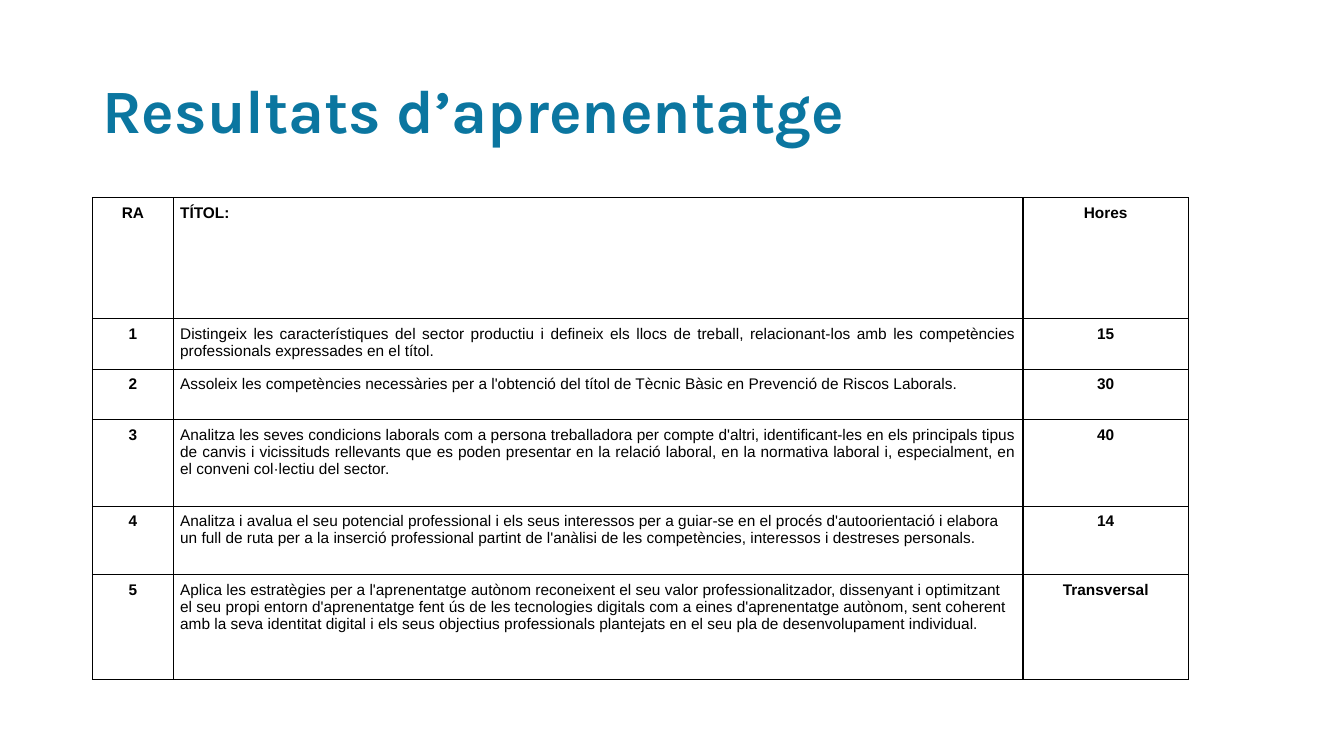
from dataclasses import dataclass

from pptx import Presentation
from pptx.dml.color import RGBColor
from pptx.enum.text import MSO_ANCHOR, PP_ALIGN
from pptx.oxml import parse_xml
from pptx.oxml.ns import nsdecls
from pptx.util import Cm, Pt


@dataclass(frozen=True)
class Theme:
    title_color: str = "0B76A0"
    text_color: str = "000000"
    border_color: str = "000000"
    title_font: str = "Karla"
    table_font: str = "Arial"
    title_size: int = 44
    table_size: int = 11
    border_width: int = 1
    cell_margin: float = 0.17


def apply(target, values):
    for name, value in values.items():
        setattr(target, name, value)


class SlideBuilder:
    def __init__(self, page, theme):
        self.page = page
        self.theme = theme

    def text(self, frame, content, font, size, color, bold, **paragraph_format):
        para = frame.paragraphs[0]
        apply(para, paragraph_format)
        span = para.add_run()
        span.text = content
        apply(span.font, {"name": font, "size": Pt(size), "bold": bold})
        span.font.color.rgb = RGBColor.from_string(color)

    def title(self, content, left, top, width, height):
        box = self.page.shapes.add_textbox(Cm(left), Cm(top), Cm(width), Cm(height))
        frame = box.text_frame
        apply(frame, {"word_wrap": True, "vertical_anchor": MSO_ANCHOR.MIDDLE})
        theme = self.theme
        self.text(frame, content, theme.title_font, theme.title_size,
                  theme.title_color, True, line_spacing=0.9)

    def borders(self, cell):
        properties = cell._tc.get_or_add_tcPr()
        for position, side in enumerate(("lnL", "lnR", "lnT", "lnB")):
            line = parse_xml(
                f'<a:{side} {nsdecls("a")} w="{Pt(self.theme.border_width)}">'
                f'<a:solidFill><a:srgbClr val="{self.theme.border_color}"/></a:solidFill>'
                f'</a:{side}>'
            )
            properties.insert(position, line)

    def cell(self, cell, content, bold, alignment):
        theme = self.theme
        margin = Cm(theme.cell_margin)
        apply(cell, {
            "margin_left": margin, "margin_right": margin,
            "margin_top": margin, "margin_bottom": margin,
            "vertical_anchor": MSO_ANCHOR.TOP,
        })
        cell.fill.background()
        self.borders(cell)
        self.text(cell.text_frame, content, theme.table_font, theme.table_size,
                  theme.text_color, bold, alignment=alignment)

    def table(self, rows, left, top, widths, heights):
        frame = self.page.shapes.add_table(
            len(rows), len(widths), Cm(left), Cm(top), Cm(sum(widths)), Cm(sum(heights)))
        table = frame.table
        apply(table, {"first_row": False, "horz_banding": False})
        for column, width in zip(table.columns, widths):
            column.width = Cm(width)
        for row, height in zip(table.rows, heights):
            row.height = Cm(height)
        for row_index, (number, outcome, hours, alignment) in enumerate(rows):
            is_header = row_index == 0
            self.cell(table.cell(row_index, 0), number, True, PP_ALIGN.CENTER)
            self.cell(table.cell(row_index, 1), outcome, is_header, alignment)
            self.cell(table.cell(row_index, 2), hours, True, PP_ALIGN.CENTER)


OUTCOMES = [
    ("RA", "TÍTOL:", "Hores", PP_ALIGN.LEFT),
    ("1", "Distingeix les característiques del sector productiu i defineix els llocs de "
          "treball, relacionant-los amb les competències professionals expressades en el títol.",
     "15", PP_ALIGN.JUSTIFY),
    ("2", "Assoleix les competències necessàries per a l'obtenció del títol de Tècnic Bàsic "
          "en Prevenció de Riscos Laborals.",
     "30", PP_ALIGN.JUSTIFY),
    ("3", "Analitza les seves condicions laborals com a persona treballadora per compte "
          "d'altri, identificant-les en els principals tipus de canvis i vicissituds rellevants "
          "que es poden presentar en la relació laboral, en la normativa laboral i, "
          "especialment, en el conveni col·lectiu del sector.",
     "40", PP_ALIGN.JUSTIFY),
    ("4", "Analitza i avalua el seu potencial professional i els seus interessos per a "
          "guiar-se en el procés d'autoorientació i elabora un full de ruta per a la inserció "
          "professional partint de l'anàlisi de les competències, interessos i destreses "
          "personals.",
     "14", PP_ALIGN.LEFT),
    ("5", "Aplica les estratègies per a l'aprenentatge autònom reconeixent el seu valor "
          "professionalitzador, dissenyant i optimitzant el seu propi entorn d'aprenentatge "
          "fent ús de les tecnologies digitals com a eines d'aprenentatge autònom, sent "
          "coherent amb la seva identitat digital i els seus objectius professionals plantejats "
          "en el seu pla de desenvolupament individual.",
     "Transversal", PP_ALIGN.LEFT),
]


def main():
    deck = Presentation()
    apply(deck, {"slide_width": Cm(33.87), "slide_height": Cm(19.05)})
    page = deck.slides.add_slide(deck.slide_layouts[6])
    builder = SlideBuilder(page, Theme())
    builder.title("Resultats d’aprenentatge", 2.33, 1.01, 29.21, 3.68)
    builder.table(OUTCOMES, 2.33, 4.98, widths=[2.04, 21.41, 4.17],
                  heights=[3.05, 1.27, 1.27, 2.18, 1.73, 2.64])
    deck.save("out.pptx")


if __name__ == "__main__":
    main()
